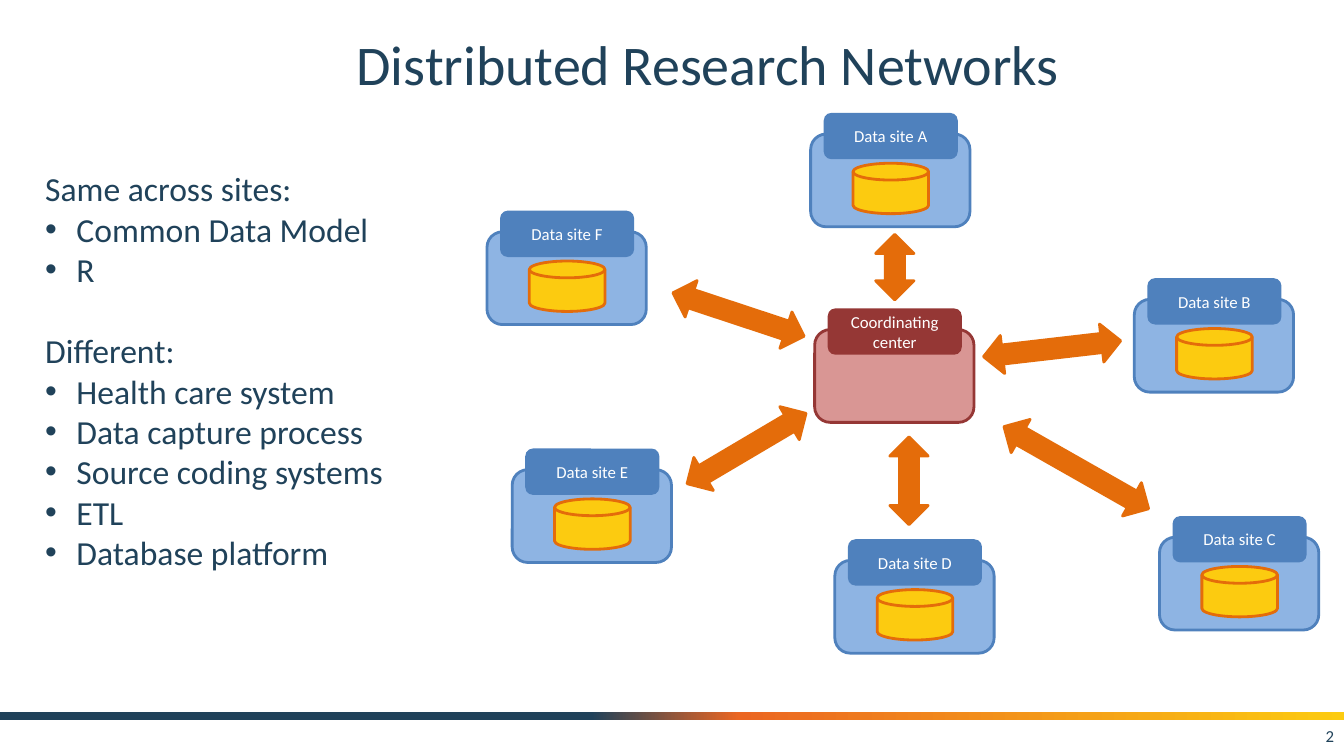
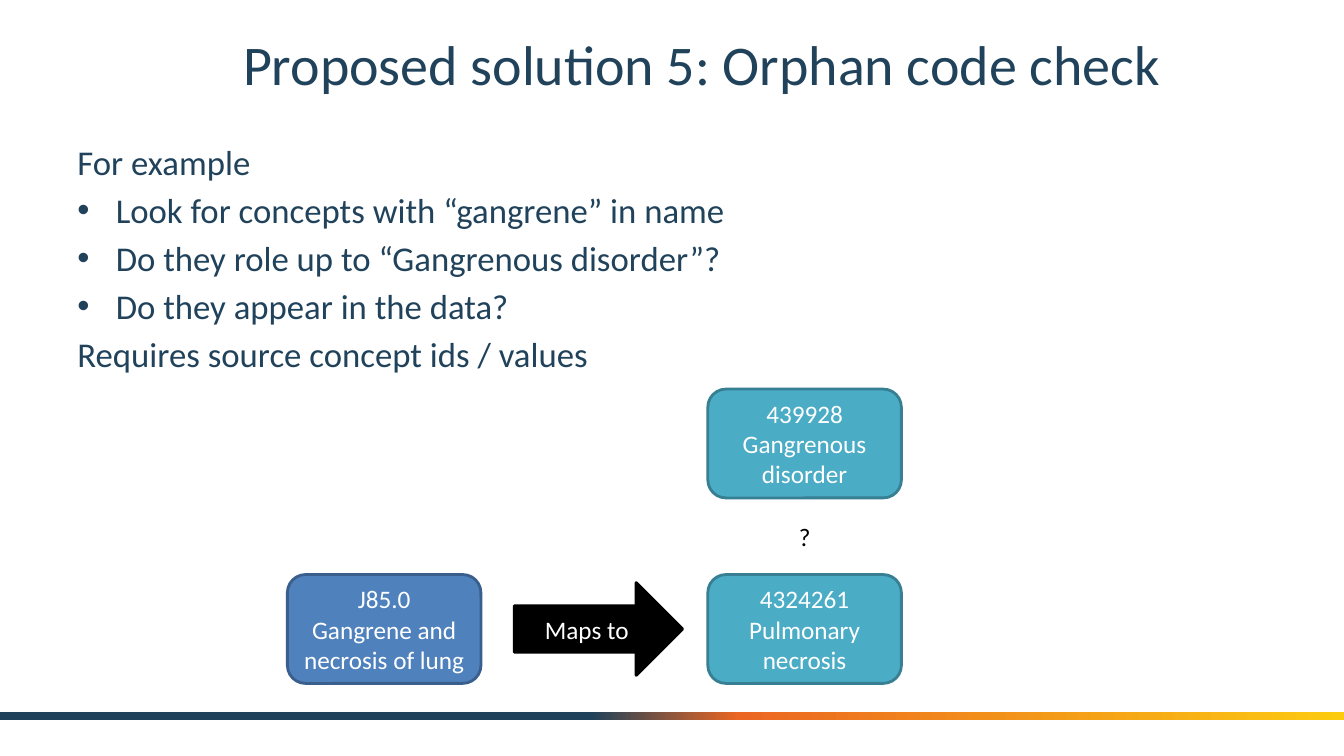
from copy import deepcopy

from pptx import Presentation
from pptx.dml.color import RGBColor
from pptx.enum.shapes import MSO_SHAPE as Kind
from pptx.enum.text import MSO_ANCHOR as Anchor, PP_ALIGN as Align
from pptx.oxml.ns import qn
from pptx.util import Inches, Pt

NAVY, WHITE, BLACK = "20425A", "FFFFFF", "000000"
BLUE, PALE_BLUE, DARK_BLUE = "4F81BD", "8EB4E3", "3A5F8C"
RED, PINK = "953735", "D99694"
ORANGE, YELLOW = "E46C0A", "FCCB10"
TEAL, DARK_TEAL = "4BACC6", "377F92"
BAND_STOPS = [(0.44, NAVY), (0.55, "EB6622"), (1, YELLOW)]
BULLET = "• "


def draw(shapes, kind, at, fill=None, line=None):
    """Add a preset shape, or a text box when kind is None."""
    place = [Inches(length) for length in at]
    if kind is None:
        return shapes.add_textbox(*place)
    shape = shapes.add_shape(kind, *place)
    shape.shadow.inherit = False
    if fill:
        shape.fill.solid()
        shape.fill.fore_color.rgb = RGBColor.from_string(fill)
    if line:
        shape.line.color.rgb = RGBColor.from_string(line)
        shape.line.width = Pt(2)
    else:
        shape.line.fill.background()
    return shape


def write(shape, lines, size, color=WHITE, align=Align.CENTER,
          anchor=Anchor.MIDDLE, indent=0, gap=0):
    """Fill a shape with paragraphs; lines that start with BULLET hang by indent."""
    frame = shape.text_frame
    frame.word_wrap = True
    frame.vertical_anchor = anchor
    for number, line in enumerate(lines):
        para = frame.add_paragraph() if number else frame.paragraphs[0]
        para.text = line.removeprefix(BULLET)
        para.alignment = align
        if line.startswith(BULLET):
            props = para._p.get_or_add_pPr()
            props.set("marL", str(Inches(indent)))
            props.set("indent", str(-Inches(indent)))
            font = props.makeelement(qn("a:buFont"), {"typeface": "Arial"})
            mark = props.makeelement(qn("a:buChar"), {"char": BULLET.strip()})
            props.extend([font, mark])
        if number and gap:
            para.space_before = Pt(gap)
        para.font.name = "Calibri"
        para.font.size = Pt(size)
        para.font.color.rgb = RGBColor.from_string(color)
    return frame.paragraphs


deck = Presentation()
deck.slide_width, deck.slide_height = Inches(13.33), Inches(7.5)

# Shared band and title
pages = []
for title in ["Distributed Research Networks",
              "Proposed solution 5: Orphan code check "]:
    page = deck.slides.add_slide(deck.slide_layouts[6])
    band = draw(page.shapes, Kind.RECTANGLE, (0, 7.06, 13.33, 0.08))
    band.fill.gradient()
    band.fill.gradient_angle = 0
    stop_list = band._element.spPr.find(qn("a:gradFill")).find(qn("a:gsLst"))
    stop_list.append(deepcopy(stop_list[0]))
    for stop, (position, color) in zip(band.fill.gradient_stops, BAND_STOPS):
        stop.position = position
        stop.color.rgb = RGBColor.from_string(color)
    write(draw(page.shapes, None, (1.37, 0.17, 11.3, 0.92)), [title], 40, NAVY)
    pages.append(page)
network, orphan = pages

# Slide 1: coordinating center, data sites and the arrows between them
cards = [
    ("Coordinating center", 8.08, 3.27),
    ("Data site F", 4.83, 2.3),
    ("Data site A", 8.04, 1.33),
    ("Data site E", 5.08, 4.66),
    ("Data site D", 8.28, 5.56),
    ("Data site C", 11.5, 5.33),
    ("Data site B", 11.25, 2.97),
]
for name, left, top in cards:
    is_site = name.startswith("Data site")
    panel_fill, accent = (PALE_BLUE, BLUE) if is_site else (PINK, RED)
    card = network.shapes.add_group_shape().shapes
    draw(card, Kind.ROUNDED_RECTANGLE, (left, top, 1.58, 0.92), panel_fill, accent)
    label = draw(card, Kind.ROUNDED_RECTANGLE,
                 (left + 0.13, top - 0.21, 1.33, 0.46), accent)
    write(label, [name], 12)
    if is_site:
        draw(card, Kind.FLOWCHART_MAGNETIC_DISK,
             (left + 0.42, top + 0.29, 0.75, 0.5), YELLOW, ORANGE)

arrows = [
    (6.64, 2.93, 1.37, 18.3),
    (6.72, 4.26, 1.37, 329.4),
    (8.58, 4.58, 0.87, 90),
    (9.85, 4.45, 1.65, 29.6),
    (9.75, 3.27, 1.37, 353.4),
    (8.55, 2.46, 0.65, 90),
]
for left, top, length, angle in arrows:
    arrow = draw(network.shapes, Kind.LEFT_RIGHT_ARROW,
                 (left, top, length, 0.38), ORANGE, ORANGE)
    arrow.rotation = angle

page_number = draw(network.shapes, None, (10.22, 7.1, 3.11, 0.4))
write(page_number, ["2"], 12, NAVY, Align.RIGHT)

comparison = draw(network.shapes, None, (0.35, 1.62, 4, 4.54))
comparison_paras = write(comparison, [
    "Same across sites:",
    "• Common Data Model",
    "• R",
    "Different:",
    "• Health care system",
    "• Data capture process",
    "• Source coding systems",
    "• ETL",
    "• Database platform",
], 24, NAVY, Align.LEFT, Anchor.TOP, indent=0.31)
comparison_paras[3].space_before = Pt(29.3)

# Slide 2: example and concept mapping
example = draw(orphan.shapes, None, (0.67, 1.35, 12, 2.25))
write(example, [
    "For example",
    "• Look for concepts with “gangrene” in name",
    "• Do they role up to “Gangrenous disorder”?",
    "• Do they appear in the data?",
    "Requires source concept ids / values",
], 24.8, NAVY, Align.LEFT, Anchor.TOP, indent=0.38, gap=4.4)

concepts = [
    (2.85, 5.7, BLUE, DARK_BLUE, ["J85.0", "Gangrene and necrosis of lung"]),
    (7.02, 5.7, TEAL, DARK_TEAL, ["4324261", "Pulmonary necrosis"]),
    (7.02, 3.86, TEAL, DARK_TEAL, ["439928", "Gangrenous disorder"]),
]
for left, top, fill, line, lines in concepts:
    concept = draw(orphan.shapes, Kind.ROUNDED_RECTANGLE,
                   (left, top, 1.92, 1.08), fill, line)
    write(concept, lines, 18)

maps_to = draw(orphan.shapes, Kind.RIGHT_ARROW, (5.1, 5.78, 1.67, 0.92), BLACK, BLACK)
write(maps_to, ["Maps to"], 18)
question = draw(orphan.shapes, None, (7.02, 5.12, 1.92, 0.4))
write(question, ["?"], 18, BLACK)

deck.save("out.pptx")
